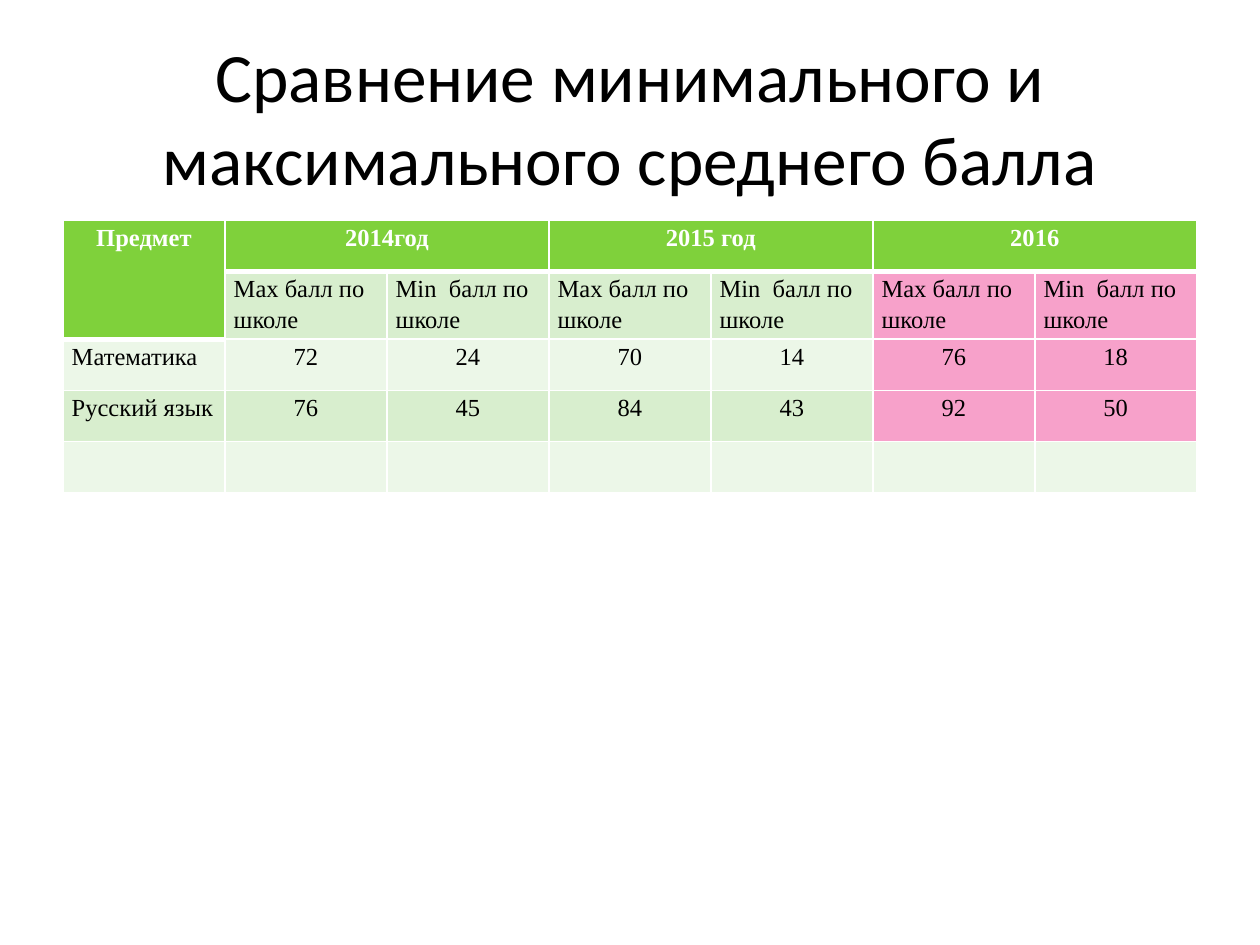
from lxml.etree import SubElement
from pptx import Presentation
from pptx.dml.color import RGBColor
from pptx.enum.text import MSO_ANCHOR, PP_ALIGN
from pptx.oxml.ns import qn
from pptx.util import Pt

COLORS = {
    "black": "000000",
    "white": "FFFFFF",
    "header": "7FD13B",
    "dark_band": "D8EECE",
    "light_band": "ECF7E8",
    "latest_year": "F7A1CA",
}
TITLE = "Сравнение минимального и максимального среднего балла"
YEARS = ["2014год", "2015 год", "2016"]
MEASURES = ["Мах балл по школе", "Мin  балл по школе"]
SCORES = [
    ["Математика", "72", "24", "70", "14", "76", "18"],
    ["Русский язык", "76", "45", "84", "43", "92", "50"],
]
ROW_COUNT, COLUMN_COUNT = 5, 7
COLUMN_WIDTH, ROW_HEIGHT = 92.57, 29.2


def color(name):
    """Return the named colour."""
    return RGBColor.from_string(COLORS[name])


def add_span(para, text, font_name, size, color_name, bold=False):
    """Add one formatted run to a paragraph."""
    span = para.add_run()
    span.text = text
    span.font.name = font_name
    span.font.size = Pt(size)
    span.font.bold = bold
    span.font.color.rgb = color(color_name)


def add_title(page):
    """Add the centred slide title."""
    box = page.shapes.add_textbox(Pt(36), Pt(21.6), Pt(648), Pt(90))
    box.text_frame.word_wrap = True
    box.text_frame.vertical_anchor = MSO_ANCHOR.MIDDLE
    para = box.text_frame.paragraphs[0]
    para.alignment = PP_ALIGN.CENTER
    add_span(para, TITLE, "Calibri", 39.6, "black")


def set_borders(cell, top, bottom):
    """Draw white cell borders with the given top and bottom widths."""
    properties = cell._tc.get_or_add_tcPr()
    for tag, width in (("lnL", 1), ("lnR", 1), ("lnT", top), ("lnB", bottom)):
        line = SubElement(properties, qn(f"a:{tag}"), w=str(Pt(width)))
        fill = SubElement(line, qn("a:solidFill"))
        SubElement(fill, qn("a:srgbClr"), val=COLORS["white"])


def fill_name(row, column):
    """Choose the fill of a cell from its place in the table."""
    if row == 0 or (row == 1 and column == 0):
        return "header"
    if column >= 5 and row < ROW_COUNT - 1:
        return "latest_year"
    return "dark_band" if row % 2 else "light_band"


def format_cell(cell, row, column, text):
    """Fill, border and label one table cell."""
    cell.margin_left = cell.margin_right = Pt(5)
    cell.margin_top = cell.margin_bottom = Pt(0)
    set_borders(cell, 3 if row == 1 else 1, 3 if row == 0 else 1)
    cell.fill.solid()
    cell.fill.fore_color.rgb = color(fill_name(row, column))
    para = cell.text_frame.paragraphs[0]
    para.font.size = Pt(14)
    para.line_spacing = 1.15
    if row == 0 or (row > 1 and column > 0):
        para.alignment = PP_ALIGN.CENTER
    if text:
        text_color = "white" if row == 0 else "black"
        add_span(para, text, "Times New Roman", 14, text_color, row == 0)


def table_rows():
    """Build the text of all table rows."""
    header = ["Предмет"] + [text for year in YEARS for text in (year, "")]
    measures = [""] + MEASURES * len(YEARS)
    return [header, measures, *SCORES, [""] * COLUMN_COUNT]


def add_score_table(page):
    """Add the table of highest and lowest scores by year."""
    frame = page.shapes.add_table(
        ROW_COUNT, COLUMN_COUNT, Pt(36), Pt(126),
        Pt(COLUMN_WIDTH * COLUMN_COUNT), Pt(ROW_HEIGHT * ROW_COUNT))
    table = frame.table
    for column in table.columns:
        column.width = Pt(COLUMN_WIDTH)
    for row in table.rows:
        row.height = Pt(ROW_HEIGHT)
    for row, texts in enumerate(table_rows()):
        for column, text in enumerate(texts):
            format_cell(table.cell(row, column), row, column, text)
    table.cell(0, 0).merge(table.cell(1, 0))
    for column in range(1, COLUMN_COUNT, 2):
        table.cell(0, column).merge(table.cell(0, column + 1))


def main():
    """Build and save the slide."""
    deck = Presentation()
    deck.slide_width, deck.slide_height = Pt(720), Pt(540)
    page = deck.slides.add_slide(deck.slide_layouts[6])
    add_title(page)
    add_score_table(page)
    deck.save("out.pptx")


if __name__ == "__main__":
    main()
